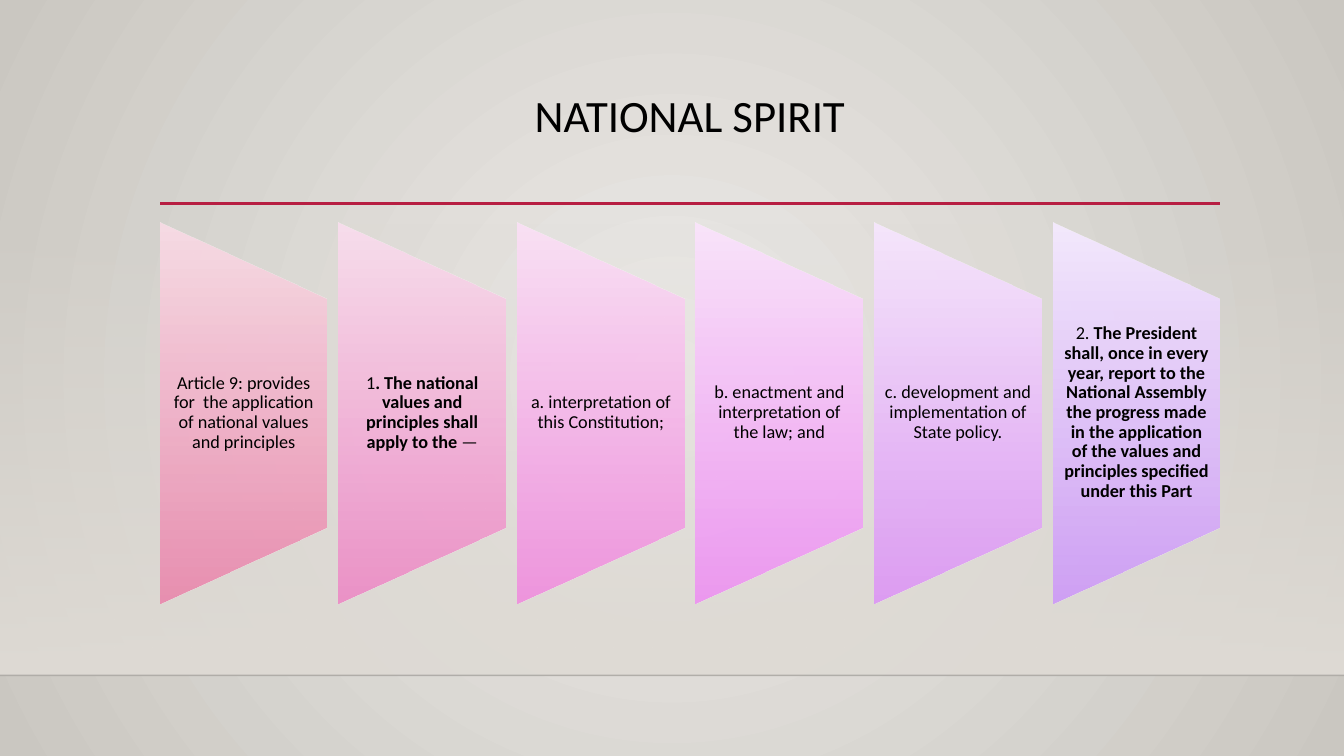
import pptx
import pptx.dml.color
import pptx.enum.shapes
import pptx.enum.text
import pptx.oxml
import pptx.oxml.ns
import pptx.util
import lxml.etree

Cm = pptx.util.Cm
RGBColor = pptx.dml.color.RGBColor
SHAPES = pptx.enum.shapes.MSO_SHAPE
ANCHOR = pptx.enum.text.MSO_ANCHOR
qn = pptx.oxml.ns.qn

BLACK = RGBColor(0x00, 0x00, 0x00)
CRIMSON = RGBColor(0xB7, 0x1E, 0x42)
WALL_LIGHT = RGBColor(0xEC, 0xEA, 0xE7)
WALL_DARK = RGBColor(0xCA, 0xC7, 0xC1)
SAND = RGBColor(0xDF, 0xDB, 0xD5)

PAGE_WIDTH, PAGE_HEIGHT = Cm(33.87), Cm(19.05)
FLOOR = Cm(17.02)
LEFT, WIDTH = Cm(4.04), Cm(26.7)
GAP = Cm(0.3)

# Each panel: top colour, bottom colour, runs of (text, bold)
PANELS = [
    (RGBColor(0xF7, 0xDC, 0xE5), RGBColor(0xEA, 0x8A, 0xAE),
     [("Article 9: provides for  the application of national values and principles", False)]),
    (RGBColor(0xF8, 0xDE, 0xED), RGBColor(0xED, 0x8D, 0xC6),
     [("1", False), (". The national values and principles shall apply to the ", True),
      ("—", False)]),
    (RGBColor(0xFA, 0xE1, 0xF5), RGBColor(0xF0, 0x90, 0xDE),
     [("a. interpretation of this Constitution;", False)]),
    (RGBColor(0xFA, 0xE4, 0xFB), RGBColor(0xEE, 0x94, 0xF2),
     [("b. enactment and interpretation of the law; and", False)]),
    (RGBColor(0xF6, 0xE7, 0xFC), RGBColor(0xDD, 0x98, 0xF5),
     [("c. development and implementation of State policy.", False)]),
    (RGBColor(0xF4, 0xEA, 0xFD), RGBColor(0xCE, 0x9C, 0xF7),
     [("2. ", False),
      ("The President shall, once in every year, report to the National Assembly "
       "the progress made in the application of the values and principles "
       "specified under this Part", True)]),
]


def set_alpha(color_element, percent):
    alpha = lxml.etree.SubElement(color_element, qn("a:alpha"))
    alpha.set("val", str(percent * 1000))


def set_gradient(fill, owner, start, end, alphas=(100, 100), circle=False):
    """Fill with two colours, top to bottom or from the centre outwards."""
    fill.gradient()
    gradient = owner.find(".//" + qn("a:gradFill"))
    gradient.set("rotWithShape", "0")
    stops = fill.gradient_stops
    for stop, color, position, alpha in zip(stops, (start, end), (0, 1), alphas):
        stop.color.rgb = color
        stop.position = position
    for color_element, alpha in zip(gradient.iter(qn("a:srgbClr")), alphas):
        if alpha < 100:
            set_alpha(color_element, alpha)
    if not circle:
        fill.gradient_angle = 270
        return
    gradient.remove(gradient.find(qn("a:lin")))
    route = lxml.etree.SubElement(gradient, qn("a:path"), {"path": "circle"})
    sides = {side: "50000" for side in "ltrb"}
    lxml.etree.SubElement(route, qn("a:fillToRect"), sides)


def write_text(frame, runs, size, anchor):
    frame.word_wrap = True
    frame.auto_size = pptx.enum.text.MSO_AUTO_SIZE.NONE
    frame.vertical_anchor = anchor
    para = frame.paragraphs[0]
    para.alignment = pptx.enum.text.PP_ALIGN.CENTER
    para.line_spacing = 0.9
    for text, bold in runs:
        span = para.add_run()
        span.text = text
        span.font.name = "Calibri"
        span.font.size = pptx.util.Pt(size)
        span.font.bold = bold
        span.font.color.rgb = BLACK


def add_shape(page, kind, left, top, width, height, start, end, alphas):
    shape = page.shapes.add_shape(kind, left, top, width, height)
    shape.shadow.inherit = False
    shape.line.fill.background()
    set_gradient(shape.fill, shape._element.spPr, start, end, alphas)
    return shape


def add_rule(page, left, right, y, color, weight):
    rule = page.shapes.add_connector(
        pptx.enum.shapes.MSO_CONNECTOR.STRAIGHT, left, y, right, y)
    rule.line.color.rgb = color
    rule.line.width = pptx.util.Pt(weight)
    lxml.etree.SubElement(rule._element.spPr, qn("a:effectLst"))
    return rule


def draw_backdrop(page):
    set_gradient(page.background.fill, page._element, WALL_LIGHT, WALL_DARK, circle=True)
    top = Cm(5.61)
    add_shape(page, SHAPES.RECTANGLE, 0, top, PAGE_WIDTH, FLOOR - top, SAND, SAND, (0, 100))
    floor_line = add_rule(page, 0, PAGE_WIDTH, FLOOR, BLACK, 1)
    set_alpha(floor_line._element.spPr.find(".//" + qn("a:srgbClr")), 20)


def draw_heading(page, left, top, width, height):
    title = page.shapes.title
    title.left, title.top, title.width, title.height = left, top, width, height
    write_text(title.text_frame, [("NATIONAL SPIRIT", False)], 32, ANCHOR.TOP)
    add_rule(page, left, left + width, top + height, CRIMSON, 2.5)


def draw_panel(page, left, top, width, height, panel):
    start, end, runs = panel
    # The trapezoid is turned a quarter, so its sides swap around its centre
    shift = (height - width) // 2
    trapezoid = add_shape(page, SHAPES.FLOWCHART_MANUAL_OPERATION, left - shift,
                          top + shift, height, width, start, end, (100, 92))
    trapezoid.rotation = 270
    # The wording stays upright in the middle three fifths
    box = page.shapes.add_textbox(left, top + height // 5, width, height * 3 // 5)
    frame = box.text_frame
    frame.margin_left = frame.margin_right = Cm(0.23)
    frame.margin_top = frame.margin_bottom = 0
    write_text(frame, runs, 13, ANCHOR.MIDDLE)


def draw_panels(page, left, top, width, height):
    panel_width = (width - GAP * (len(PANELS) - 1)) // len(PANELS)
    for index, panel in enumerate(PANELS):
        draw_panel(page, left + index * (panel_width + GAP), top, panel_width, height, panel)


def main():
    deck = pptx.Presentation()
    deck.slide_width, deck.slide_height = PAGE_WIDTH, PAGE_HEIGHT
    page = deck.slides.add_slide(deck.slide_layouts[5])
    draw_backdrop(page)
    draw_heading(page, LEFT, Cm(2.23), WIDTH, Cm(2.9))
    draw_panels(page, LEFT, Cm(5.6), WIDTH, Cm(9.6))
    deck.save("out.pptx")


if __name__ == "__main__":
    main()
